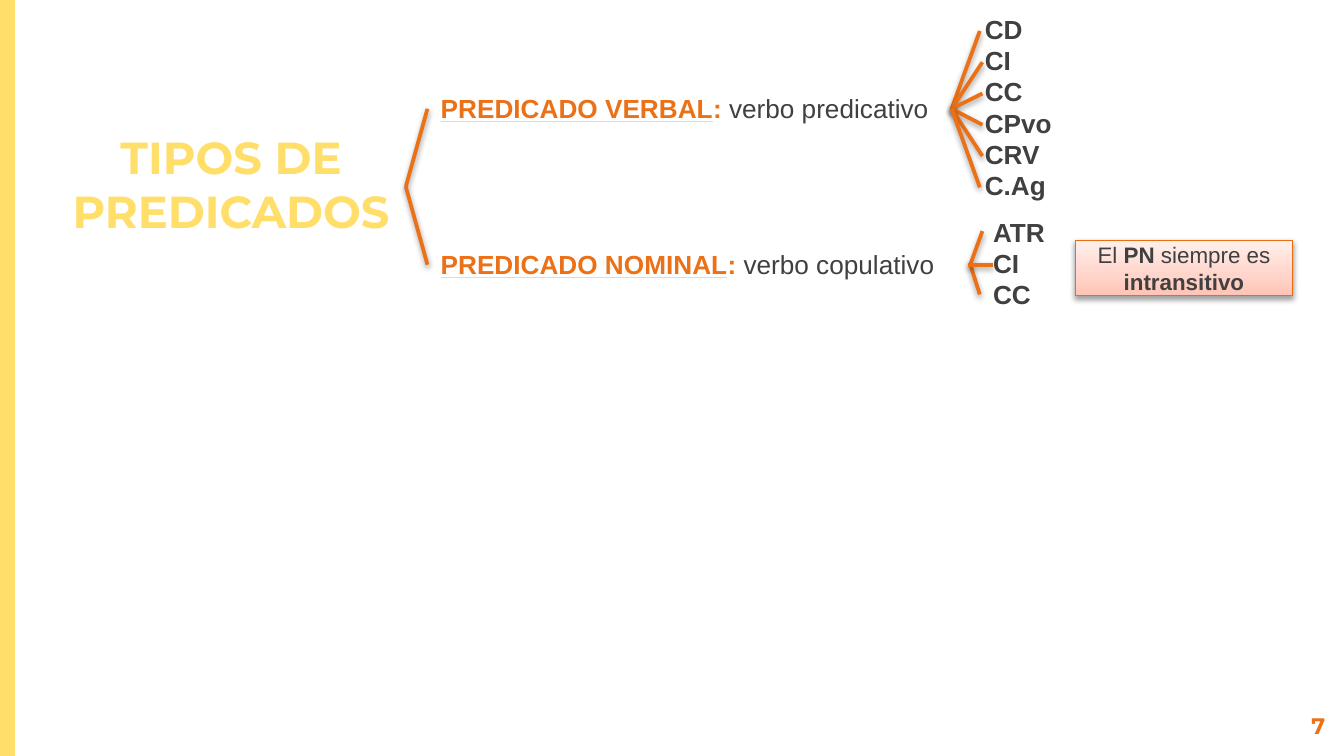
from dataclasses import dataclass

from pptx import Presentation
from pptx.dml.color import RGBColor
from pptx.enum.shapes import MSO_CONNECTOR, MSO_SHAPE
from pptx.enum.text import MSO_ANCHOR, MSO_AUTO_SIZE, PP_ALIGN
from pptx.oxml import parse_xml
from pptx.oxml.ns import nsdecls
from pptx.util import Pt

LINE = MSO_CONNECTOR.STRAIGHT
RECTANGLE = MSO_SHAPE.RECTANGLE
LEFT, CENTER, RIGHT = PP_ALIGN.LEFT, PP_ALIGN.CENTER, PP_ALIGN.RIGHT
TOP, MIDDLE, BOTTOM = MSO_ANCHOR.TOP, MSO_ANCHOR.MIDDLE, MSO_ANCHOR.BOTTOM
NO_AUTOFIT = MSO_AUTO_SIZE.NONE
TITLE_ONLY = 5


@dataclass(frozen=True)
class Theme:
    """Colours, fonts and sizes of the slide."""
    yellow: str = "FFDF6A"
    orange: str = "EC7016"
    border: str = "EC6D10"
    gray: str = "404040"
    note_stops: tuple = ((0, "FFC3B4"), (35, "FFD4CA"), (100, "FFEFEB"))
    heading_font: str = "Montserrat"
    body_font: str = "Arial"
    title_size: int = 24
    body_size: int = 14
    small_size: int = 12
    line_pitch: float = 16.75


THEME = Theme()


def style_span(span, size, color, bold=False, font=THEME.body_font):
    """Format one run."""
    span.font.name = font
    span.font.size = Pt(size)
    span.font.bold = bold
    span.font.color.rgb = RGBColor.from_string(color)


def set_frame(shape, inset, anchor, wrap=True):
    """Set the margins, anchor and wrapping of a shape's text."""
    frame = shape.text_frame
    frame.margin_left = frame.margin_right = Pt(7.2)
    frame.margin_top = frame.margin_bottom = Pt(inset)
    frame.vertical_anchor = anchor
    frame.auto_size = NO_AUTOFIT
    frame.word_wrap = wrap
    return frame


def add_spans(para, parts, size):
    """Append (text, colour, bold) runs to a paragraph."""
    for text, color, bold in parts:
        span = para.add_run()
        span.text = text
        style_span(span, size, color, bold)


def add_shadow(shape):
    """Give a shape the soft shadow used on this slide."""
    shape._element.spPr.append(parse_xml(
        f'<a:effectLst {nsdecls("a")}>'
        '<a:outerShdw blurRad="40000" dist="20000" dir="5400000" rotWithShape="0">'
        '<a:srgbClr val="000000"><a:alpha val="38000"/></a:srgbClr>'
        '</a:outerShdw></a:effectLst>'))


def add_side_band(page, box):
    """Draw the band on the left edge."""
    band = page.shapes.add_shape(RECTANGLE, *map(Pt, box))
    band.shadow.inherit = False
    band.fill.solid()
    band.fill.fore_color.rgb = RGBColor.from_string(THEME.yellow)
    band.line.fill.background()


def add_title(page, box):
    """Place and format the slide title."""
    title = page.shapes.title
    title.left, title.top, title.width, title.height = map(Pt, box)
    frame = set_frame(title, 7.2, BOTTOM)
    frame.text = "TIPOS DE PREDICADOS"
    para = frame.paragraphs[0]
    para.alignment = CENTER
    style_span(para.runs[0], THEME.title_size, THEME.yellow, True, THEME.heading_font)


def add_page_number(page, box):
    """Write the page number."""
    frame = set_frame(page.shapes.add_textbox(*map(Pt, box)), 7.2, TOP)
    frame.text = "7"
    para = frame.paragraphs[0]
    para.alignment = RIGHT
    style_span(para.runs[0], THEME.small_size, THEME.orange, True, THEME.heading_font)


def add_predicate(page, box, name, verb):
    """Write a predicate type with an underlined name and its verb."""
    frame = set_frame(page.shapes.add_textbox(*map(Pt, box)), 3.6, TOP, False)
    para = frame.paragraphs[0]
    add_spans(para, ((name, THEME.orange, True), (": ", THEME.orange, True),
                     (verb, THEME.gray, False)), THEME.body_size)
    name_span = para.runs[0]
    name_span.font.underline = True
    name_span.font._element.find("{*}latin").addprevious(parse_xml(
        f'<a:uFill {nsdecls("a")}><a:solidFill><a:srgbClr val="{THEME.yellow}"/>'
        '</a:solidFill></a:uFill>'))


def add_complements(page, box, names):
    """List the complements of a predicate, one on each line."""
    frame = set_frame(page.shapes.add_textbox(*map(Pt, box)), 3.6, TOP, False)
    frame.text = "\n".join(names)
    for para in frame.paragraphs:
        para.alignment = LEFT
        para.line_spacing = Pt(THEME.line_pitch)
        style_span(para.runs[0], THEME.body_size, THEME.gray, True)


def add_fan(page, origin, tips):
    """Draw lines from one origin to each tip."""
    for tip in tips:
        branch = page.shapes.add_connector(LINE, *map(Pt, (*origin, *tip)))
        branch.line.width = Pt(2)
        branch.line.color.rgb = RGBColor.from_string(THEME.orange)
        add_shadow(branch)


def add_note(page, box):
    """Draw the shaded note about the nominal predicate."""
    note = page.shapes.add_shape(RECTANGLE, *map(Pt, box))
    stops = "".join(f'<a:gs pos="{place * 1000}"><a:srgbClr val="{color}"/></a:gs>'
                    for place, color in THEME.note_stops)
    note._element.spPr.append(parse_xml(
        f'<a:gradFill {nsdecls("a")} rotWithShape="1"><a:gsLst>{stops}</a:gsLst>'
        '<a:lin ang="16200000" scaled="0"/></a:gradFill>'))
    note.line.width = Pt(0.75)
    note.line.color.rgb = RGBColor.from_string(THEME.border)
    add_shadow(note)
    para = set_frame(note, 3.6, MIDDLE).paragraphs[0]
    para.alignment = CENTER
    add_spans(para, (("El ", THEME.gray, False), ("PN", THEME.gray, True),
                     (" siempre es ", THEME.gray, False),
                     ("intransitivo", THEME.gray, True)), THEME.small_size)


def main():
    """Build the slide and save it."""
    deck = Presentation()
    deck.slide_width, deck.slide_height = Pt(720), Pt(405)
    page = deck.slides.add_slide(deck.slide_layouts[TITLE_ONLY])
    add_side_band(page, (0, 0, 8, 405))
    add_page_number(page, (674, 374.4, 43, 24.5))
    add_title(page, (30.2, 65.5, 187.2, 69))

    verbal_y, nominal_y = 58.3, 141.8
    add_predicate(page, (229, verbal_y - 12.2, 281, 24.5),
                  "PREDICADO VERBAL", "verbo predicativo")
    add_predicate(page, (229, nominal_y - 12.2, 291, 24.5),
                  "PREDICADO NOMINAL", "verbo copulativo")
    add_complements(page, (520.5, 3.6, 50.4, 108.7),
                    ("CD", "CI", "CC", "CPvo", "CRV", "C.Ag"))
    add_complements(page, (524.9, 112.3, 42.5, 58.3), ("ATR", "CI", "CC"))

    tip_xs = (524.9, 526.3, 526.3, 526.3, 526.3, 524.9)
    add_fan(page, (509.8, verbal_y),
            [(x, 16.6 + row * THEME.line_pitch) for row, x in enumerate(tip_xs)])
    add_fan(page, (519.8, nominal_y), ((526.3, 123.8), (524.9, 157.7)))
    add_fan(page, (518.4, nominal_y), ((532.1, nominal_y),))
    add_fan(page, (217.4, (verbal_y + nominal_y) / 2),
            ((229, verbal_y), (229, nominal_y)))
    add_note(page, (576, 128.9, 116.6, 29.5))
    deck.save("out.pptx")


if __name__ == "__main__":
    main()
